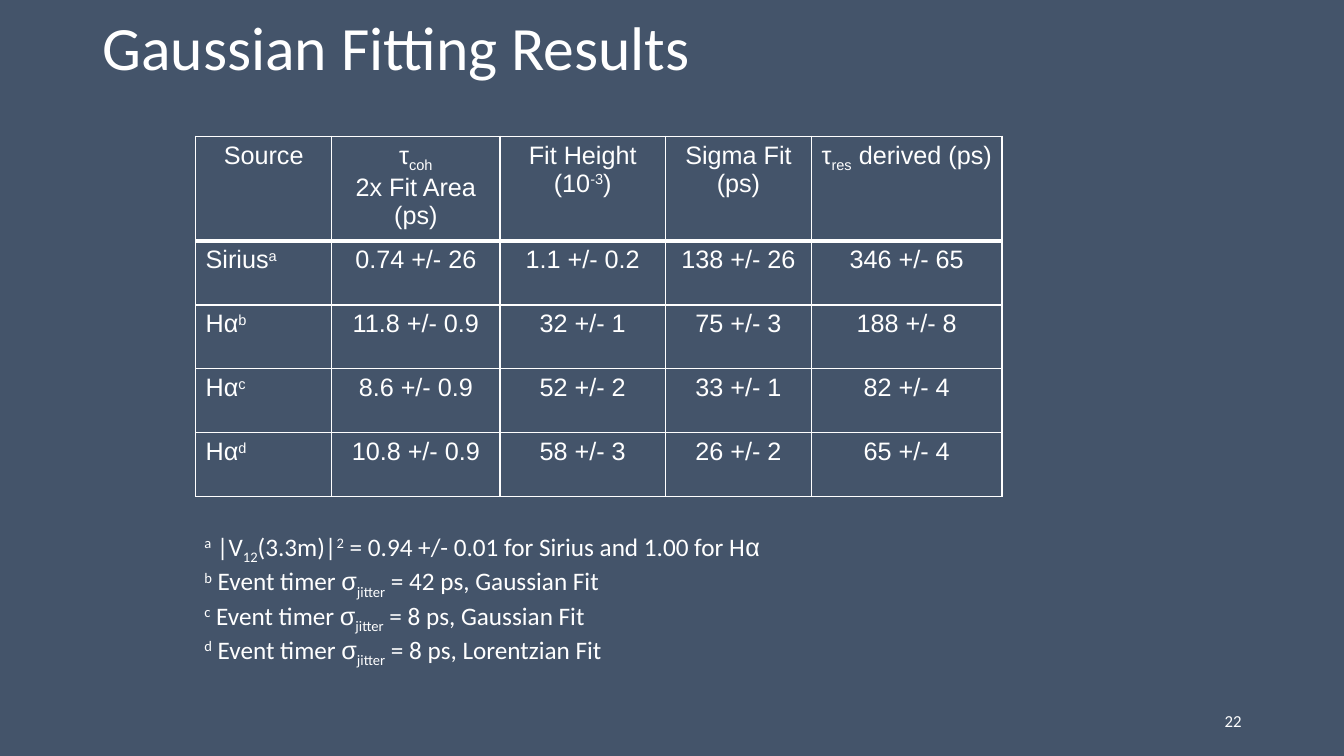
"""Build the Gaussian fitting results slide with its table and footnotes."""
from lxml.etree import SubElement
from pptx import Presentation
from pptx.dml.color import RGBColor
from pptx.enum.text import MSO_ANCHOR as Anchor, MSO_AUTO_SIZE as AutoSize, PP_ALIGN as Align
from pptx.oxml.ns import qn
from pptx.util import Cm, Pt

SLATE = RGBColor(0x44, 0x54, 0x6A)
WHITE = RGBColor(0xFF, 0xFF, 0xFF)
BODY_FONT, TABLE_FONT = "Calibri", "Arial"
GREEK = ("α", "σ")
BASELINES = {"^": "30000", "_": "-25000"}

TITLE = "Gaussian Fitting Results"
PAGE = "22"
RESULTS = [
    ("Source", "τ{_coh}\n2x Fit Area (ps)", "Fit Height (10{^-3})", "Sigma Fit (ps)",
     "τ{_res} derived (ps)"),
    ("Sirius{^a}", "0.74 +/- 26", "1.1 +/- 0.2", "138 +/- 26", "346 +/- 65"),
    ("Hα{^b}", "11.8 +/- 0.9", "32 +/- 1", "75 +/- 3", "188 +/- 8"),
    ("Hα{^c}", "8.6 +/- 0.9", "52 +/- 2", "33 +/- 1", "82 +/- 4"),
    ("Hα{^d}", "10.8 +/- 0.9", "58 +/- 3", "26 +/- 2", "65 +/- 4"),
]
FOOTNOTES = "\n".join([
    "{^a} |V{_12}(3.3m)|{^2} = 0.94 +/- 0.01 for Sirius and 1.00 for H{α}",
    "{^b} Event timer {σ}{_jitter} = 42 ps, Gaussian Fit",
    "{^c} Event timer {σ}{_jitter} = 8 ps, Gaussian Fit",
    "{^d} Event timer {σ}{_jitter} = 8 ps, Lorentzian Fit",
])
COLUMN_WIDTHS = (3.43, 4.24, 4.17, 3.68, 4.8)
ROW_HEIGHT = 1.61


def write(frame, text, size=18, font=BODY_FONT, align=Align.LEFT, spacing=None):
    """Fill a text frame; {^x} raises, {_x} lowers and {α} isolates a Greek letter."""
    for index, line in enumerate(text.split("\n")):
        paragraph = frame.add_paragraph() if index else frame.paragraphs[0]
        paragraph.alignment = align
        if spacing:
            paragraph.line_spacing = spacing
        for piece in filter(None, line.replace("}", "{").split("{")):
            run = paragraph.add_run()
            run.text = piece[1:] if piece[0] in BASELINES else piece
            run.font.size = Pt(size)
            run.font.name = TABLE_FONT if piece in GREEK else font
            run.font.color.rgb = WHITE
            if piece[0] in BASELINES:
                run.font._element.set("baseline", BASELINES[piece[0]])


def outline(cell, bottom=1, top=1):
    """Draw the four white borders of a cell."""
    for side, points in (("L", 1), ("R", 1), ("T", top), ("B", bottom)):
        line = SubElement(cell._tc.get_or_add_tcPr(), qn(f"a:ln{side}"), w=str(Pt(points)))
        SubElement(SubElement(line, qn("a:solidFill")), qn("a:srgbClr"), val=str(WHITE))


def add_results(slide):
    """Add the table of fit results."""
    grid = slide.shapes.add_table(
        len(RESULTS), len(COLUMN_WIDTHS), Cm(4.93), Cm(3.43),
        Cm(sum(COLUMN_WIDTHS)), Cm(ROW_HEIGHT * len(RESULTS))).table
    grid.first_row = grid.horz_banding = False
    for column, width in zip(grid.columns, COLUMN_WIDTHS):
        column.width = Cm(width)
    for r, values in enumerate(RESULTS):
        grid.rows[r].height = Cm(ROW_HEIGHT)
        for c, value in enumerate(values):
            cell = grid.cell(r, c)
            outline(cell, bottom=3 if r == 0 else 1, top=3 if r == 1 else 1)
            cell.fill.background()
            write(cell.text_frame, value, font=TABLE_FONT,
                  align=Align.LEFT if r and not c else Align.CENTER)


def main():
    """Assemble and save the slide."""
    deck = Presentation()
    deck.slide_width, deck.slide_height = Cm(33.87), Cm(19.05)
    slide = deck.slides.add_slide(deck.slide_layouts[5])
    slide.background.fill.solid()
    slide.background.fill.fore_color.rgb = SLATE

    title = slide.shapes.title
    title.left, title.top, title.width, title.height = Cm(2.33), Cm(0), Cm(29.21), Cm(2.54)
    title.text_frame.vertical_anchor = Anchor.MIDDLE
    title.text_frame.auto_size = AutoSize.NONE
    write(title.text_frame, TITLE, size=44, spacing=0.9)

    page = slide.shapes.add_textbox(Cm(23.92), Cm(17.66), Cm(7.62), Cm(1.01)).text_frame
    page.word_wrap = True
    page.vertical_anchor = Anchor.MIDDLE
    write(page, PAGE, size=12, align=Align.RIGHT)

    add_results(slide)

    notes = slide.shapes.add_textbox(Cm(4.9), Cm(13.26), Cm(17.15), Cm(3.33)).text_frame
    notes.word_wrap = True
    notes.auto_size = AutoSize.SHAPE_TO_FIT_TEXT
    write(notes, FOOTNOTES)

    deck.save("out.pptx")


if __name__ == "__main__":
    main()
